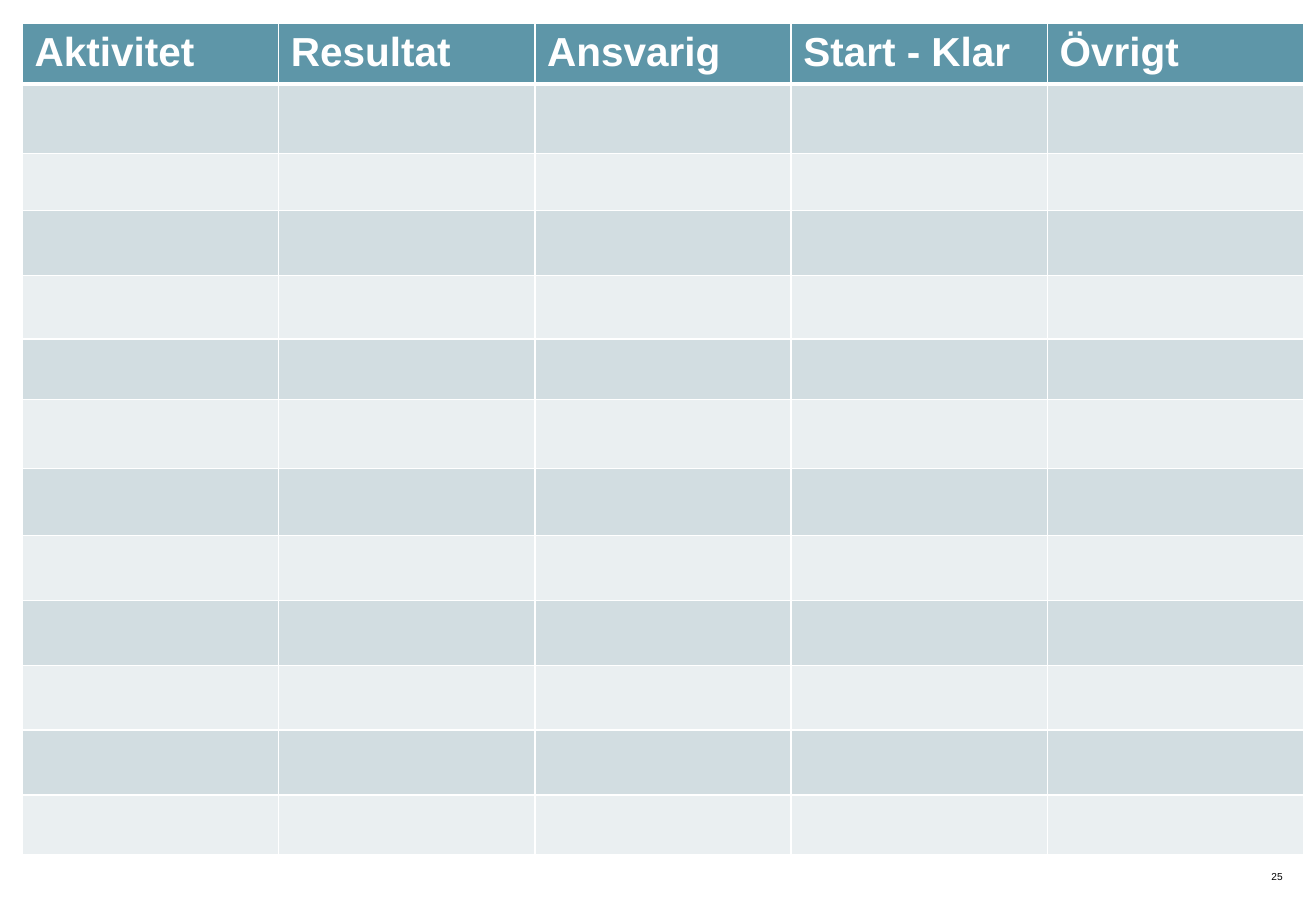
"""Build an activity plan slide with an empty five-column table."""
from lxml.etree import SubElement
from pptx import Presentation
from pptx.dml.color import RGBColor
from pptx.enum.text import PP_ALIGN as Align
from pptx.oxml.ns import qn
from pptx.util import Pt

HEADINGS = ["Aktivitet", "Resultat", "Ansvarig", "Start - Klar", "Övrigt"]
ROW_HEIGHTS = [36, 41, 34, 38.5, 37.5, 36, 41, 39.5, 38.5, 38.5, 38.5, 38.5, 35.5]
COLUMN_WIDTH = 151.9
WHITE, TEAL, BAND_DARK, BAND_LIGHT = "FFFFFF", "5E96A8", "D2DDE1", "EAEFF1"


def set_font(paragraph, size, color, bold=False):
    font = paragraph.font
    font.name, font.size, font.bold = "Arial", Pt(size), bold
    font.color.rgb = RGBColor.from_string(color)


def add_border(cell, side, width):
    line = SubElement(cell._tc.get_or_add_tcPr(), qn(f"a:ln{side}"), w=str(Pt(width)))
    fill = SubElement(line, qn("a:solidFill"))
    SubElement(fill, qn("a:srgbClr"), val=WHITE)


presentation = Presentation()
presentation.slide_width, presentation.slide_height = Pt(780), Pt(540)
slide = presentation.slides.add_slide(presentation.slide_layouts[6])

number_box = slide.shapes.add_textbox(Pt(721.4), Pt(516.2), Pt(38.9), Pt(7.2))
number_frame = number_box.text_frame
number_frame.word_wrap = True
number_frame.margin_left = number_frame.margin_right = 0
number_frame.margin_top = number_frame.margin_bottom = 0
number = number_frame.paragraphs[0]
number.text = "25"
number.alignment = Align.RIGHT
set_font(number, 6, "000000")

table = slide.shapes.add_table(
    len(ROW_HEIGHTS), len(HEADINGS), Pt(13.3), Pt(13.9),
    Pt(COLUMN_WIDTH * len(HEADINGS)), Pt(sum(ROW_HEIGHTS))).table
for column in table.columns:
    column.width = Pt(COLUMN_WIDTH)

for row_index, height in enumerate(ROW_HEIGHTS):
    row = table.rows[row_index]
    row.height = Pt(height)
    band = BAND_DARK if row_index % 2 else BAND_LIGHT
    for cell in row.cells:
        add_border(cell, "L", 1)
        add_border(cell, "R", 1)
        add_border(cell, "T", 3 if row_index == 1 else 1)
        add_border(cell, "B", 3 if row_index == 0 else 1)
        cell.fill.solid()
        cell.fill.fore_color.rgb = RGBColor.from_string(band if row_index else TEAL)

for cell, heading in zip(table.rows[0].cells, HEADINGS):
    cell.text = heading
    set_font(cell.text_frame.paragraphs[0], 24, WHITE, bold=True)

presentation.save("out.pptx")
